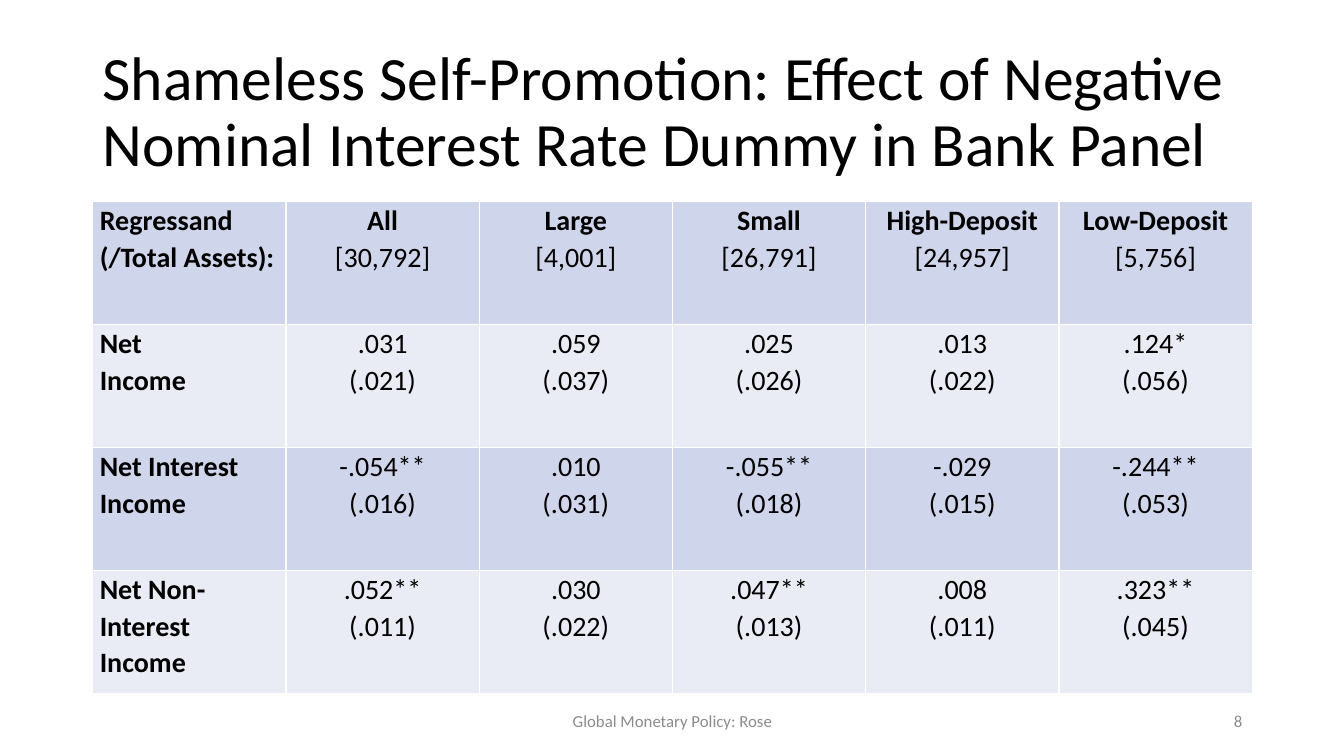
from lxml import etree
from pptx import Presentation
from pptx import util as u
from pptx.dml.color import RGBColor
from pptx.enum import text
from pptx.oxml import ns

BLACK = RGBColor(0x00, 0x00, 0x00)
GREY = RGBColor(0x8C, 0x8C, 0x8C)
WHITE = RGBColor(0xFF, 0xFF, 0xFF)
BAND_DARK = RGBColor(0xCF, 0xD5, 0xEA)
BAND_LIGHT = RGBColor(0xE9, 0xEB, 0xF5)

LEFT, CENTER, RIGHT = text.PP_ALIGN.LEFT, text.PP_ALIGN.CENTER, text.PP_ALIGN.RIGHT
GRID_LEFT, GRID_COLUMN, GRID_ROW = 0.92, 0.5, 0.1

RESULTS = [
    ["Regressand\n(/Total Assets):", "All\n[30,792]", "Large\n[4,001]",
     "Small\n[26,791]", "High-Deposit\n[24,957]", "Low-Deposit\n[5,756]"],
    ["Net\nIncome", ".031\n(.021)", ".059\n(.037)",
     ".025\n(.026)", ".013\n(.022)", ".124*\n(.056)"],
    ["Net Interest\nIncome", "-.054**\n(.016)", ".010\n(.031)",
     "-.055**\n(.018)", "-.029\n(.015)", "-.244**\n(.053)"],
    ["Net Non-Interest Income", ".052**\n(.011)", ".030\n(.022)",
     ".047**\n(.013)", ".008\n(.011)", ".323**\n(.045)"],
]


class ResultsSlide:
    font_name = "Calibri"
    cell_format = {
        "margin_left": u.Inches(0.07), "margin_right": u.Inches(0.07),
        "margin_top": 0, "margin_bottom": 0,
        "vertical_anchor": text.MSO_ANCHOR.TOP,
    }

    def __init__(self, deck):
        self.slide = deck.slides.add_slide(deck.slide_layouts[6])

    def place(self, column, row, columns, rows):
        return [u.Inches(length) for length in (
            GRID_LEFT + column * GRID_COLUMN, row * GRID_ROW,
            columns * GRID_COLUMN, rows * GRID_ROW)]

    def apply(self, target, values):
        for name, value in values.items():
            setattr(target, name, value)

    def format_paragraph(self, paragraph, size, color, align, spacing, bold=False):
        self.apply(paragraph, {"alignment": align, "line_spacing": spacing})
        self.apply(paragraph.font, {"name": self.font_name, "size": u.Pt(size), "bold": bold})
        paragraph.font.color.rgb = color

    def add_text(self, wording, area, size, color, align=LEFT, spacing=1.0):
        frame = self.slide.shapes.add_textbox(*self.place(*area)).text_frame
        self.apply(frame, {"word_wrap": True, "vertical_anchor": text.MSO_ANCHOR.MIDDLE,
                           "text": wording})
        self.format_paragraph(frame.paragraphs[0], size, color, align, spacing)

    def add_borders(self, cell, color, width):
        properties = cell._tc.get_or_add_tcPr()
        for position, edge in enumerate(("a:lnL", "a:lnR", "a:lnT", "a:lnB")):
            line = etree.Element(ns.qn(edge), w=str(u.Pt(width)))
            fill = etree.SubElement(line, ns.qn("a:solidFill"))
            etree.SubElement(fill, ns.qn("a:srgbClr"), val=str(color))
            properties.insert(position, line)

    def add_table(self, results, area):
        table = self.slide.shapes.add_table(
            len(results), len(results[0]), *self.place(*area)).table
        self.apply(table, {"first_row": False, "horz_banding": False})
        for row, entries in enumerate(results):
            for column, entry in enumerate(entries):
                cell = table.cell(row, column)
                self.apply(cell, {**self.cell_format, "text": entry})
                cell.fill.solid()
                cell.fill.fore_color.rgb = BAND_LIGHT if row % 2 else BAND_DARK
                self.add_borders(cell, WHITE, 1)
                for line, paragraph in enumerate(cell.text_frame.paragraphs):
                    bold = column == 0 or (row == 0 and line == 0)
                    align = CENTER if column else LEFT
                    self.format_paragraph(paragraph, 20, BLACK, align, 1.07, bold)


def main():
    deck = Presentation()
    deck.slide_width, deck.slide_height = u.Inches(13.33), u.Inches(7.5)
    page = ResultsSlide(deck)
    page.add_text("Shameless Self-Promotion: Effect of Negative Nominal Interest Rate "
                  "Dummy in Bank Panel", (0, 4, 23, 14.5), 44, BLACK, spacing=0.9)
    page.add_table(RESULTS, (0, 20, 23, 48.8))
    page.add_text("Global Monetary Policy: Rose", (7, 69.5, 9, 4), 12, GREY, CENTER)
    page.add_text("8", (17, 69.5, 6, 4), 12, GREY, RIGHT)
    deck.save("out.pptx")


if __name__ == "__main__":
    main()
